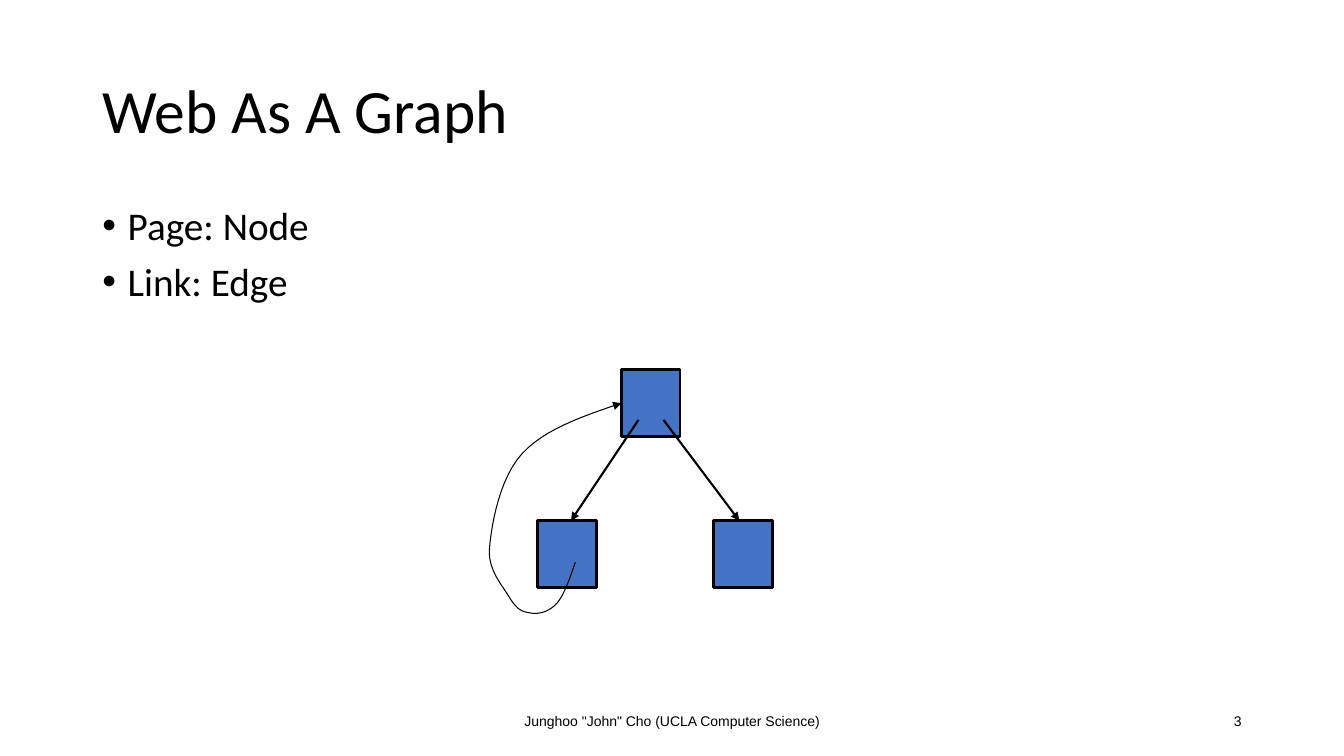
from dataclasses import dataclass

from lxml.etree import SubElement
from pptx import Presentation
from pptx.dml.color import RGBColor
from pptx.enum.shapes import MSO_CONNECTOR as Connector, MSO_SHAPE as Shape
from pptx.enum.text import MSO_ANCHOR as Anchor, PP_ALIGN as Align
from pptx.oxml.ns import qn
from pptx.util import Cm, Pt


@dataclass(frozen=True)
class Theme:
    ink: RGBColor = RGBColor(0x00, 0x00, 0x00)
    node: RGBColor = RGBColor(0x44, 0x72, 0xC4)
    text_font: str = "Calibri"
    footer_font: str = "Arial"
    title_size: float = 44
    body_size: float = 28
    footer_size: float = 10
    node_line: float = 2
    link_line: float = 1.5
    back_link_line: float = 0.75


THEME = Theme()
NODE_WIDTH, NODE_HEIGHT = 1.48, 1.69
CURVE_STEPS = 12

# Positions in centimetres
NODES = [(13.55, 13.12), (17.99, 13.12), (15.66, 9.31)]
LINKS = [((16.72, 10.58), (18.63, 13.12)), ((16.09, 10.58), (14.39, 13.12))]

# Back link: a start point, then two control points and an end per curve
BACK_LINK_START = (14.5, 14.17)
BACK_LINK_CURVES = [
    ((14.35, 14.61), (14.2, 15.04), (14.0, 15.24)),
    ((13.79, 15.44), (13.54, 15.49), (13.34, 15.44)),
    ((13.13, 15.42), (13.0, 15.32), (12.83, 15.04)),
    ((12.67, 14.76), (12.27, 14.35), (12.34, 13.77)),
    ((12.4, 13.16), (12.6, 12.04), (13.16, 11.43)),
    ((13.72, 10.82), (14.68, 10.49), (15.66, 10.16)),
]


def apply_format(target, values):
    for name, value in values.items():
        setattr(target, name, value)


def style_line(shape, width):
    shape.line.color.rgb = THEME.ink
    shape.line.width = Pt(width)


def add_arrowhead(shape):
    line = shape._element.spPr.find(qn("a:ln"))
    SubElement(line, qn("a:tailEnd"), type="triangle")


def add_bullet(paragraph):
    properties = paragraph._p.get_or_add_pPr()
    properties.set("marL", str(Cm(0.64)))
    properties.set("indent", str(-Cm(0.64)))
    SubElement(properties, qn("a:buFont"), typeface="Arial")
    SubElement(properties, qn("a:buChar"), char="•")


def add_text(slide, box, lines, size, font, anchor=Anchor.MIDDLE, bullets=False, **layout):
    frame = slide.shapes.add_textbox(*map(Cm, box)).text_frame
    apply_format(frame, {"word_wrap": True, "vertical_anchor": anchor})
    frame.text = "\n".join(lines)
    for paragraph in frame.paragraphs:
        apply_format(paragraph, layout)
        apply_format(paragraph.font, {"size": Pt(size), "name": font})
        paragraph.font.color.rgb = THEME.ink
        if bullets:
            add_bullet(paragraph)


def add_node(slide, left, top):
    box = map(Cm, (left, top, NODE_WIDTH, NODE_HEIGHT))
    node = slide.shapes.add_shape(Shape.RECTANGLE, *box)
    node.shadow.inherit = False
    node.fill.solid()
    node.fill.fore_color.rgb = THEME.node
    style_line(node, THEME.node_line)


def add_link(slide, start, end):
    link = slide.shapes.add_connector(Connector.STRAIGHT, *map(Cm, start + end))
    style_line(link, THEME.link_line)
    add_arrowhead(link)
    SubElement(link._element.spPr, qn("a:effectLst"))


def curve_points(start, curves):
    """Yield points along a chain of cubic curves."""
    for first, second, end in curves:
        for step in range(1, CURVE_STEPS + 1):
            t = step / CURVE_STEPS
            u = 1 - t
            weights = (u**3, 3 * u * u * t, 3 * u * t * t, t**3)
            corners = (start, first, second, end)
            yield tuple(
                Cm(sum(weight * corner[axis] for weight, corner in zip(weights, corners)))
                for axis in (0, 1)
            )
        start = end


def add_back_link(slide, start, curves):
    builder = slide.shapes.build_freeform(*map(Cm, start))
    builder.add_line_segments(curve_points(start, curves), close=False)
    back_link = builder.convert_to_shape()
    back_link.shadow.inherit = False
    back_link.fill.background()
    style_line(back_link, THEME.back_link_line)
    add_arrowhead(back_link)


def main():
    presentation = Presentation()
    apply_format(presentation, {"slide_width": Cm(33.87), "slide_height": Cm(19.05)})
    slide = presentation.slides.add_slide(presentation.slide_layouts[6])

    # Footer and slide number
    add_text(slide, (11.22, 17.65, 11.43, 1.01),
             ['Junghoo "John" Cho (UCLA Computer Science)'],
             THEME.footer_size, THEME.footer_font, alignment=Align.CENTER)
    add_text(slide, (23.92, 17.65, 7.62, 1.01), ["3"],
             THEME.footer_size, THEME.footer_font, alignment=Align.RIGHT)

    # Title and bullets
    add_text(slide, (2.33, 1.01, 29.21, 3.68), ["Web As A Graph"],
             THEME.title_size, THEME.text_font, line_spacing=0.9)
    add_text(slide, (2.33, 5.07, 29.21, 12.09), ["Page: Node", "Link: Edge"],
             THEME.body_size, THEME.text_font, anchor=Anchor.TOP, bullets=True,
             line_spacing=0.9, space_before=Pt(10))

    # Graph
    for left, top in NODES:
        add_node(slide, left, top)
    for start, end in LINKS:
        add_link(slide, start, end)
    add_back_link(slide, BACK_LINK_START, BACK_LINK_CURVES)

    presentation.save("out.pptx")


if __name__ == "__main__":
    main()
